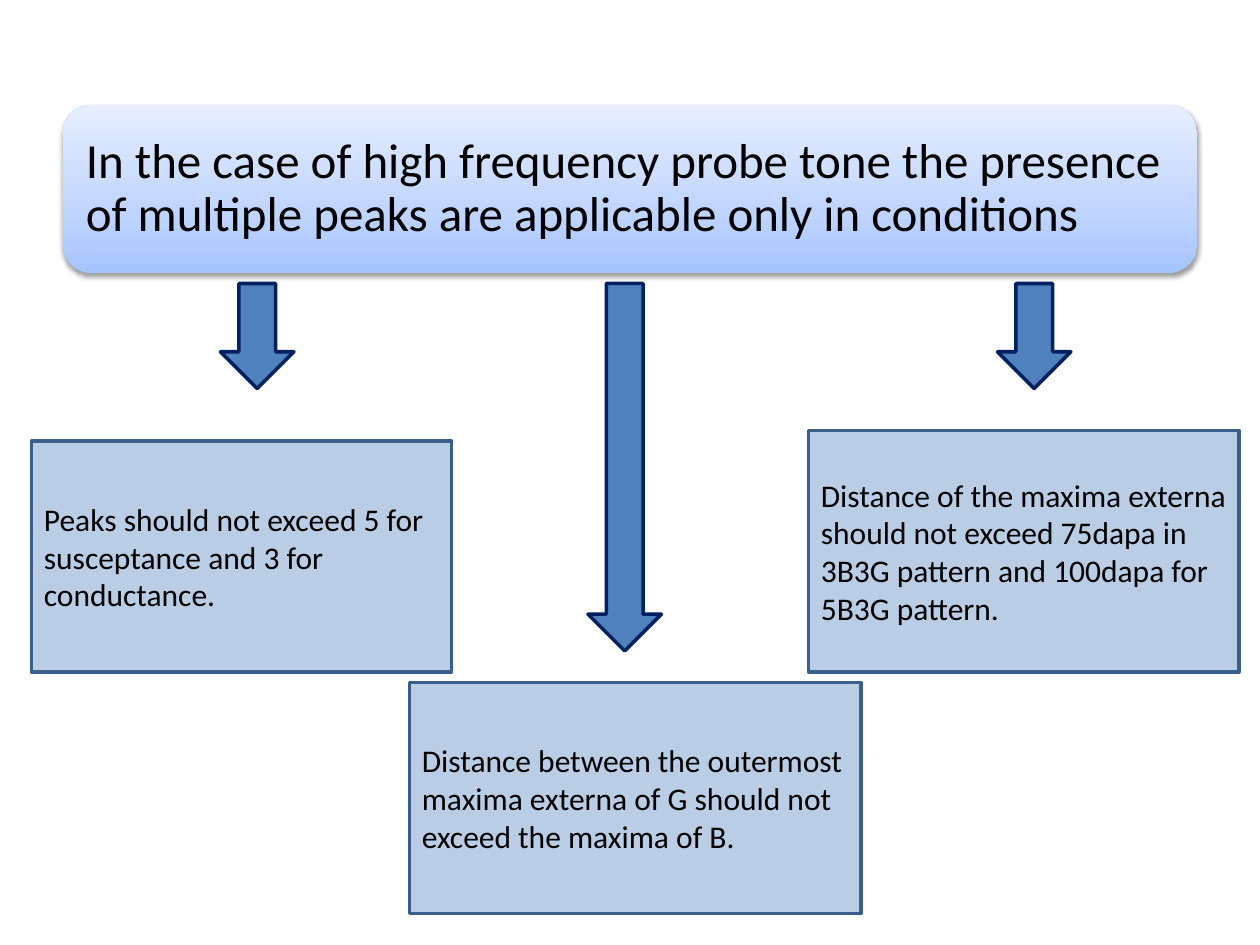
from copy import deepcopy

from lxml import etree
from pptx import Presentation
from pptx.dml.color import RGBColor
from pptx.enum import shapes, text
from pptx.oxml.ns import qn
from pptx.util import Pt

BLACK = RGBColor(0x00, 0x00, 0x00)
BOX_FILL = RGBColor(0xB9, 0xCD, 0xE5)
BOX_LINE = RGBColor(0x3A, 0x5F, 0x8C)
ARROW_FILL = RGBColor(0x4F, 0x81, 0xBD)
ARROW_LINE = RGBColor(0x00, 0x20, 0x60)
HEADING_STOPS = [
    (0, RGBColor(0xA4, 0xC4, 0xFF)),
    (0.35, RGBColor(0xBF, 0xD4, 0xFF)),
    (1, RGBColor(0xE6, 0xEE, 0xFF)),
]

HEADING = ("In the case of high frequency probe tone the presence of multiple "
           "peaks are applicable only in conditions")
CONDITIONS = [
    ((18, 252, 240, 132),
     "Peaks should not exceed 5 for susceptance and 3 for conductance."),
    ((234, 390, 258, 132),
     "Distance between the outermost maxima externa of G should not exceed "
     "the maxima of B."),
    ((462, 246, 246, 138),
     "Distance of the maxima externa should not exceed 75dapa in 3B3G pattern "
     "and 100dapa for 5B3G pattern."),
]
ARROW_TOP, ARROW_WIDTH = 162, 42
ARROWS = [(126, 60), (336, 210), (570, 60)]  # left, height


def in_points(box):
    return [Pt(length) for length in box]


def write_text(shape, content, size, inset=None, **paragraph_format):
    frame = shape.text_frame
    frame.word_wrap = True
    frame.vertical_anchor = text.MSO_ANCHOR.MIDDLE
    if inset is not None:
        for side in ("left", "top", "right", "bottom"):
            setattr(frame, f"margin_{side}", Pt(inset))
    paragraph = frame.paragraphs[0]
    paragraph.text = content
    paragraph.alignment = text.PP_ALIGN.LEFT
    for name, value in paragraph_format.items():
        setattr(paragraph, name, value)
    font = paragraph.runs[0].font
    for name, value in {"name": "Calibri", "size": Pt(size)}.items():
        setattr(font, name, value)
    font.color.rgb = BLACK


def add_gradient(shape, stops):
    """Fill the shape from bottom to top with three or more stops."""
    shape.fill.gradient()
    shape.fill.gradient_angle = 90
    stop_list = shape.element.spPr.find(qn("a:gradFill")).find(qn("a:gsLst"))
    while len(stop_list) < len(stops):
        stop_list.append(deepcopy(stop_list[0]))
    for stop, (position, color) in zip(shape.fill.gradient_stops, stops):
        stop.position = position
        stop.color.rgb = color


def add_soft_shadow(shape):
    shape.shadow.inherit = False
    effects = shape.element.spPr.find(qn("a:effectLst"))
    shadow = etree.SubElement(effects, qn("a:outerShdw"), blurRad=str(Pt(3.1)),
                              dist=str(Pt(1.6)), dir="5400000", rotWithShape="0")
    color = etree.SubElement(shadow, qn("a:srgbClr"), val=str(BLACK))
    etree.SubElement(color, qn("a:alpha"), val="38000")


def add_heading(slide, box):
    left, top, width, height = box
    group = slide.shapes.add_group_shape()
    panel = group.shapes.add_shape(
        shapes.MSO_SHAPE.ROUNDED_RECTANGLE, *in_points(box))
    add_gradient(panel, HEADING_STOPS)
    panel.line.fill.background()
    add_soft_shadow(panel)
    padding = 4.7
    label = group.shapes.add_textbox(*in_points(
        (left + padding, top + padding, width - 2 * padding, height - 2 * padding)))
    write_text(label, HEADING, 28, inset=8.4, line_spacing=0.9)


def add_outlined_shape(slide, kind, box, fill, line):
    shape = slide.shapes.add_shape(kind, *in_points(box))
    shape.shadow.inherit = False
    shape.fill.solid()
    shape.fill.fore_color.rgb = fill
    shape.line.color.rgb = line
    shape.line.width = Pt(2)
    return shape


def add_condition(slide, box, content):
    shape = add_outlined_shape(
        slide, shapes.MSO_SHAPE.RECTANGLE, box, BOX_FILL, BOX_LINE)
    write_text(shape, content, 18)


def main():
    presentation = Presentation()
    presentation.slide_width, presentation.slide_height = Pt(720), Pt(540)
    slide = presentation.slides.add_slide(presentation.slide_layouts[6])
    add_heading(slide, (36, 60, 648, 96))
    for box, content in CONDITIONS:
        add_condition(slide, box, content)
    for left, height in ARROWS:
        add_outlined_shape(slide, shapes.MSO_SHAPE.DOWN_ARROW,
                           (left, ARROW_TOP, ARROW_WIDTH, height),
                           ARROW_FILL, ARROW_LINE)
    presentation.save("out.pptx")


if __name__ == "__main__":
    main()
